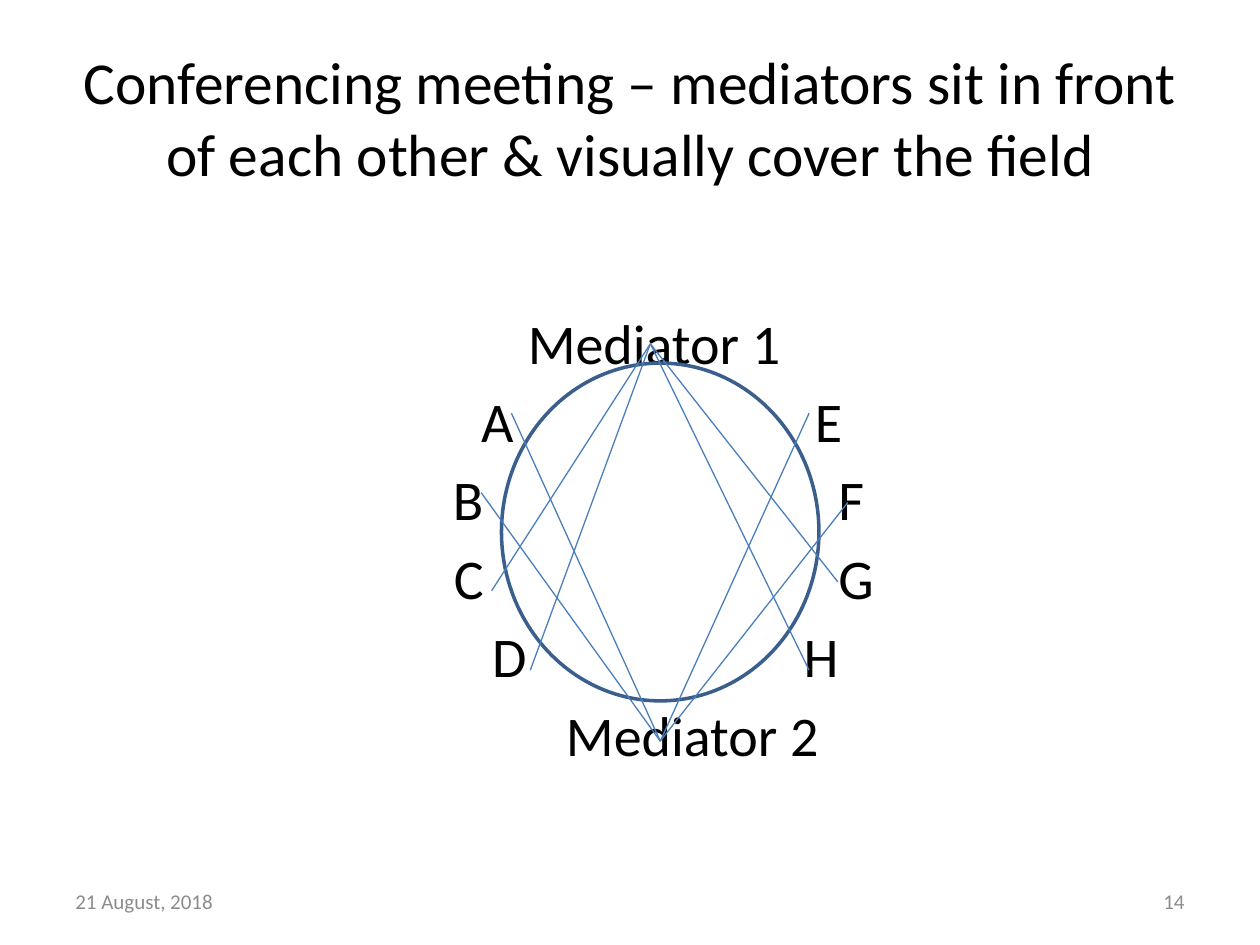
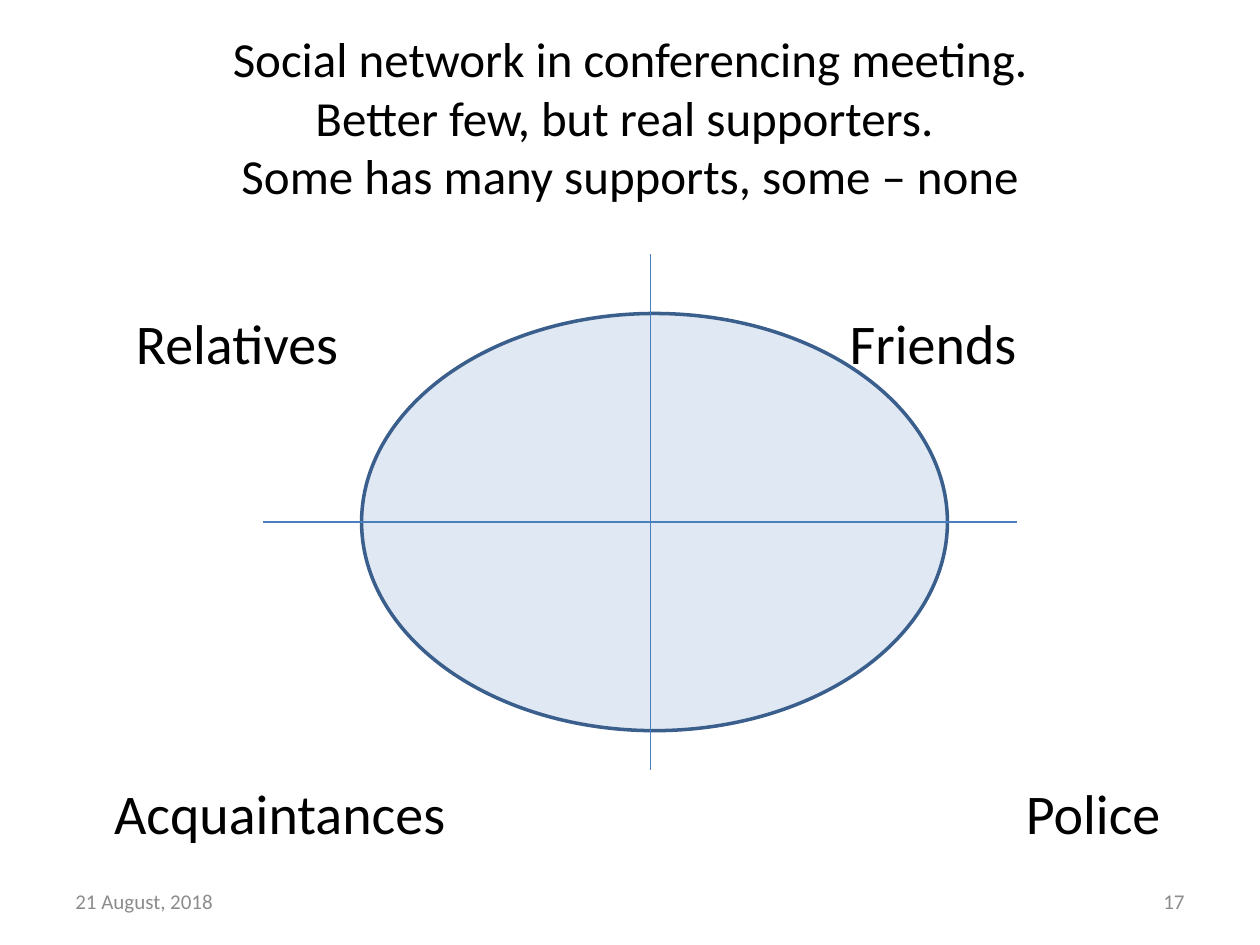
from lxml.etree import SubElement
from pptx import Presentation
from pptx.dml.color import RGBColor
from pptx.enum.shapes import MSO_CONNECTOR as Connector, MSO_SHAPE as Shape
from pptx.enum.text import MSO_ANCHOR as Anchor, PP_ALIGN as Align
from pptx.oxml.ns import qn
from pptx.util import Cm, Pt

# Content: all lengths are in centimetres, label rows count from 0
DATE = "21 August, 2018"

MEDIATORS = {"Mediator 1": (13.11, 6.93), "Mediator 2": (13.31, 14.94)}
SEATS_IN_VIEW = {
    "Mediator 1": [(9.91, 11.91), (10.69, 13.51), (16.89, 11.73), (16.31, 13.51)],
    "Mediator 2": [(17.09, 10.13), (16.31, 8.33), (10.31, 8.33), (9.7, 9.93)],
}

SLIDES = [
    {
        "title": "Conferencing meeting – mediators sit in front "
                 "of each other & visually cover the field",
        "title_size": 34,
        "number": "14",
        "labels": [
            ("Mediator 1", 10.64, 0),
            ("A", 9.7, 1), ("E", 16.43, 1),
            ("B", 9.13, 2), ("F", 16.9, 2),
            ("C", 9.15, 3), ("G", 16.9, 3),
            ("D", 9.92, 4), ("H", 16.2, 4),
            ("Mediator 2", 11.41, 5),
        ],
        "ellipse": (10.11, 7.32, 6.4, 6.81),
        "fill": ("white", 100),
        "lines": [(MEDIATORS[name], seat)
                  for name, seats in SEATS_IN_VIEW.items() for seat in seats],
    },
    {
        "title": "Social network in conferencing meeting.\v"
                 "Better few, but real supporters. \v"
                 "Some has many supports, some – none",
        "title_size": 28,
        "number": "17",
        "labels": [
            ("Relatives", 2.74, 0), ("Friends", 17.13, 0),
            ("Acquaintances", 2.3, 6), ("Police", 20.68, 6),
        ],
        "ellipse": (7.29, 6.32, 11.81, 8.41),
        "fill": ("blue", 18),
        "lines": [((13.11, 5.13), (13.11, 15.52)), ((5.31, 10.52), (20.5, 10.52))],
    },
]

# Shared look
COLORS = {"text": "000000", "footer": "8C8C8C", "white": "FFFFFF",
          "blue": "4F81BD", "outline": "3A5F8C", "line": "4B7EBC"}
FONT = "Calibri"
TITLE_AREA = (1.27, 0.76, 22.86, 3.18)
DATE_AREA = (1.27, 17.65, 5.92, 1.02)
NUMBER_AREA = (18.21, 17.65, 5.92, 1.02)
LABEL_TOP, LABEL_PITCH, LABEL_SIZE = 6.1, 1.58, 32
NO_MARGINS = dict.fromkeys(
    ("margin_left", "margin_right", "margin_top", "margin_bottom"), 0)


def color(name):
    return RGBColor.from_string(COLORS[name])


def add_text(page, text, area, size, tint="text", align=Align.LEFT, **frame_format):
    frame = page.shapes.add_textbox(*map(Cm, area)).text_frame
    frame_format = {"word_wrap": True, "vertical_anchor": Anchor.MIDDLE, **frame_format}
    for name, value in frame_format.items():
        setattr(frame, name, value)
    frame.text = text
    para = frame.paragraphs[0]
    para.alignment = align
    for span in para.runs:
        for name, value in {"name": FONT, "size": Pt(size)}.items():
            setattr(span.font, name, value)
        span.font.color.rgb = color(tint)


def add_label(page, text, left, row):
    """Place a label on the row grid, in a box wide enough for one line."""
    area = (left, LABEL_TOP + row * LABEL_PITCH, 0.5 + 0.6 * len(text), LABEL_PITCH)
    add_text(page, text, area, LABEL_SIZE, **NO_MARGINS)


def add_ellipse(page, area, fill, opacity):
    ellipse = page.shapes.add_shape(Shape.OVAL, *map(Cm, area))
    ellipse.shadow.inherit = False
    ellipse.fill.solid()
    ellipse.fill.fore_color.rgb = color(fill)
    ellipse.line.color.rgb = color("outline")
    ellipse.line.width = Pt(2)
    if opacity < 100:
        fill_color = ellipse.fill._xPr.find(qn("a:solidFill"))[0]
        SubElement(fill_color, qn("a:alpha"), val=str(opacity * 1000))


def add_line(page, start, end):
    line = page.shapes.add_connector(Connector.STRAIGHT, *map(Cm, start + end))
    line.line.color.rgb = color("line")
    line.line.width = Pt(0.75)
    SubElement(line._element.spPr, qn("a:effectLst"))


def add_page(deck, content):
    page = deck.slides.add_slide(deck.slide_layouts[6])
    add_text(page, content["title"], TITLE_AREA, content["title_size"], align=Align.CENTER)
    for label in content["labels"]:
        add_label(page, *label)
    add_text(page, DATE, DATE_AREA, 12, "footer")
    add_text(page, content["number"], NUMBER_AREA, 12, "footer", Align.RIGHT)
    add_ellipse(page, content["ellipse"], *content["fill"])
    for start, end in content["lines"]:
        add_line(page, start, end)


def main():
    deck = Presentation()
    deck.slide_width, deck.slide_height = Cm(25.4), Cm(19.05)
    for content in SLIDES:
        add_page(deck, content)
    deck.save("out.pptx")


if __name__ == "__main__":
    main()
